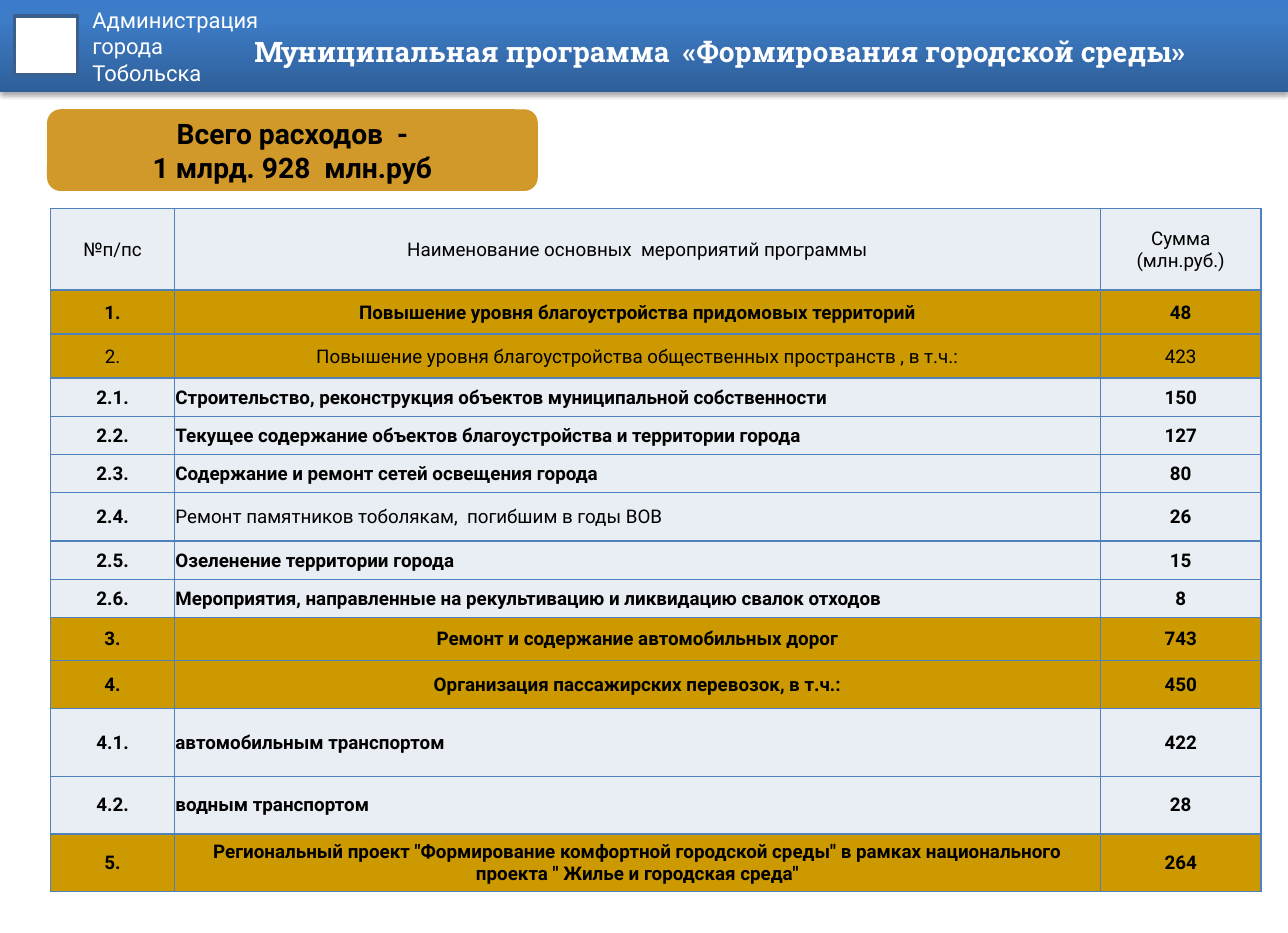
from copy import deepcopy

from lxml import etree
from pptx import Presentation
from pptx.dml.color import RGBColor
from pptx.enum.shapes import MSO_SHAPE
from pptx.enum.text import MSO_ANCHOR, PP_ALIGN
from pptx.oxml.ns import qn
from pptx.util import Cm, Pt

RECT, ROUNDED = MSO_SHAPE.RECTANGLE, MSO_SHAPE.ROUNDED_RECTANGLE
TOP, MIDDLE = MSO_ANCHOR.TOP, MSO_ANCHOR.MIDDLE
LEFT, CENTER = PP_ALIGN.LEFT, PP_ALIGN.CENTER

WHITE, BLACK = "FFFFFF", "000000"
HEADER_STOPS = [(0, "2F5F99"), (0.8, "3D7CC7"), (1, "3A7CCB")]
EMBLEM_LINE = "3A5F8C"
TOTAL_FILL = "D1982A"
SECTION_FILL, ITEM_FILL, GRID = "CC9900", "E9EDF4", "4F81BD"

COLUMNS = [2.79, 20.85, 3.61]
# Height in cm, cell texts, section row, bold flag of each cell
REGULAR, BOLD = (False,) * 3, (True,) * 3
ROWS = [
    (1.83, ["№п/пс", "Наименование основных  мероприятий программы",
            "Сумма\n(млн.руб.)"], False, REGULAR),
    (0.99, ["1.", "Повышение уровня благоустройства придомовых территорий", "48"],
     True, BOLD),
    (0.99, ["2.", "Повышение уровня благоустройства общественных пространств , в т.ч.:",
            "423"], True, REGULAR),
    (0.86, ["2.1.", "Строительство, реконструкция объектов муниципальной собственности",
            "150"], False, BOLD),
    (0.86, ["2.2.", "Текущее содержание объектов благоустройства и территории города",
            "127"], False, BOLD),
    (0.86, ["2.3.", "Содержание и ремонт сетей освещения города", "80"], False, BOLD),
    (1.09, ["2.4.", "Ремонт памятников тоболякам,  погибшим в годы ВОВ", "26"],
     False, (True, False, True)),
    (0.86, ["2.5.", "Озеленение территории города", "15"], False, BOLD),
    (0.86, ["2.6.", "Мероприятия, направленные на рекультивацию и ликвидацию "
            "свалок отходов", "8"], False, BOLD),
    (0.96, ["3.", "Ремонт и содержание автомобильных дорог", "743"], True, BOLD),
    (1.09, ["4.", "Организация пассажирских перевозок, в т.ч.:", "450"], True, BOLD),
    (1.52, ["4.1.", "автомобильным транспортом", "422"], False, BOLD),
    (1.3, ["4.2.", "водным транспортом", "28"], False, BOLD),
    (1.3, ["5.", 'Региональный проект "Формирование комфортной городской среды" '
           'в рамках национального проекта " Жилье и городская среда"', "264"],
     True, BOLD),
]


def rgb(color):
    return RGBColor.from_string(color)


def write(tf, text, size=12, font="Roboto", color=BLACK, bold=False, align=CENTER):
    """Put each line of the text in a paragraph of its own."""
    for i, line in enumerate(text.split("\n")):
        p = tf.paragraphs[0] if i == 0 else tf.add_paragraph()
        p.alignment = align
        r = p.add_run()
        r.text = line
        r.font.size, r.font.name, r.font.bold = Pt(size), font, bold
        r.font.color.rgb = rgb(color)


def frame(tf, anchor):
    tf.word_wrap = True
    tf.vertical_anchor = anchor
    tf.margin_left = tf.margin_right = Cm(0.28)
    tf.margin_top = tf.margin_bottom = Cm(0.15)


def add_box(slide, kind, x, y, w, h, fill=None, line=None):
    sp = slide.shapes.add_shape(kind, Cm(x), Cm(y), Cm(w), Cm(h))
    sp.shadow.inherit = False
    if fill:
        sp.fill.solid()
        sp.fill.fore_color.rgb = rgb(fill)
    if line:
        sp.line.color.rgb, sp.line.width = rgb(line), Pt(2)
    else:
        sp.line.fill.background()
    return sp


def add_text(slide, text, x, y, w, h, anchor=TOP, **fmt):
    tf = slide.shapes.add_textbox(Cm(x), Cm(y), Cm(w), Cm(h)).text_frame
    frame(tf, anchor)
    write(tf, text, **fmt)


def add_header(slide, x, y, w, h):
    # Gradient band
    band = add_box(slide, RECT, x, y, w, h)
    band.fill.gradient()
    band.fill.gradient_angle = 90
    stops = next(band._element.iter(qn("a:gsLst")))
    stops.append(deepcopy(stops[0]))
    for stop, (position, color) in zip(band.fill.gradient_stops, HEADER_STOPS):
        stop.position = position
        stop.color.rgb = rgb(color)

    # Soft shadow under the band
    effects = band._element.spPr.find(qn("a:effectLst"))
    shadow = etree.SubElement(effects, qn("a:outerShdw"), blurRad=str(Pt(3.1)),
                              dist=str(Pt(1.8)), dir="5400000", rotWithShape="0")
    shade = etree.SubElement(shadow, qn("a:srgbClr"), val=BLACK)
    etree.SubElement(shade, qn("a:alpha"), val="35000")

    # Emblem place, owner and title
    add_box(slide, RECT, x + 0.33, y + 0.36, 1.42, 1.32, WHITE, EMBLEM_LINE)
    add_text(slide, "Администрация\nгорода\nТобольска", x + 1.8, y, 6.8, 2.7,
             size=14, color=WHITE, align=LEFT)
    add_text(slide, "Муниципальная программа  «Формирования городской среды»",
             x + 5.31, y, 21.8, 2.31, MIDDLE,
             size=18, font="Roboto Slab", color=WHITE, bold=True)


def add_total(slide, x, y, w, h):
    sp = add_box(slide, ROUNDED, x, y, w, h, TOTAL_FILL)
    frame(sp.text_frame, MIDDLE)
    write(sp.text_frame, "Всего расходов  -\n1 млрд. 928  млн.руб", size=18, bold=True)


def add_borders(cell):
    tc_pr = cell._tc.get_or_add_tcPr()
    for i, side in enumerate(("a:lnL", "a:lnR", "a:lnT", "a:lnB")):
        ln = etree.Element(qn(side), w=str(Pt(1)))
        fill = etree.SubElement(ln, qn("a:solidFill"))
        etree.SubElement(fill, qn("a:srgbClr"), val=GRID)
        tc_pr.insert(i, ln)


def add_spending_table(slide, x, y):
    table = slide.shapes.add_table(
        len(ROWS), len(COLUMNS), Cm(x), Cm(y),
        Cm(sum(COLUMNS)), Cm(sum(row[0] for row in ROWS))).table
    table.first_row = table.horz_banding = False
    for column, width in zip(table.columns, COLUMNS):
        column.width = Cm(width)
    for i, (height, texts, section, bolds) in enumerate(ROWS):
        table.rows[i].height = Cm(height)
        for j, (text, bold) in enumerate(zip(texts, bolds)):
            cell = table.cell(i, j)
            cell.vertical_anchor = MIDDLE
            cell.margin_left = cell.margin_right = cell.margin_top = Cm(0.02)
            cell.margin_bottom = 0
            cell.fill.solid()
            cell.fill.fore_color.rgb = rgb(SECTION_FILL if section else ITEM_FILL)
            add_borders(cell)
            is_item_name = j == 1 and i > 0 and not section
            write(cell.text_frame, text, bold=bold,
                  align=LEFT if is_item_name else CENTER)


def main():
    prs = Presentation()
    prs.slide_width, prs.slide_height = Cm(29), Cm(21)
    slide = prs.slides.add_slide(prs.slide_layouts[6])
    add_header(slide, 0, 0, 29, 2.08)
    add_total(slide, 1.06, 2.46, 11.05, 1.84)
    add_spending_table(slide, 1.14, 4.7)
    prs.save("out.pptx")


if __name__ == "__main__":
    main()
